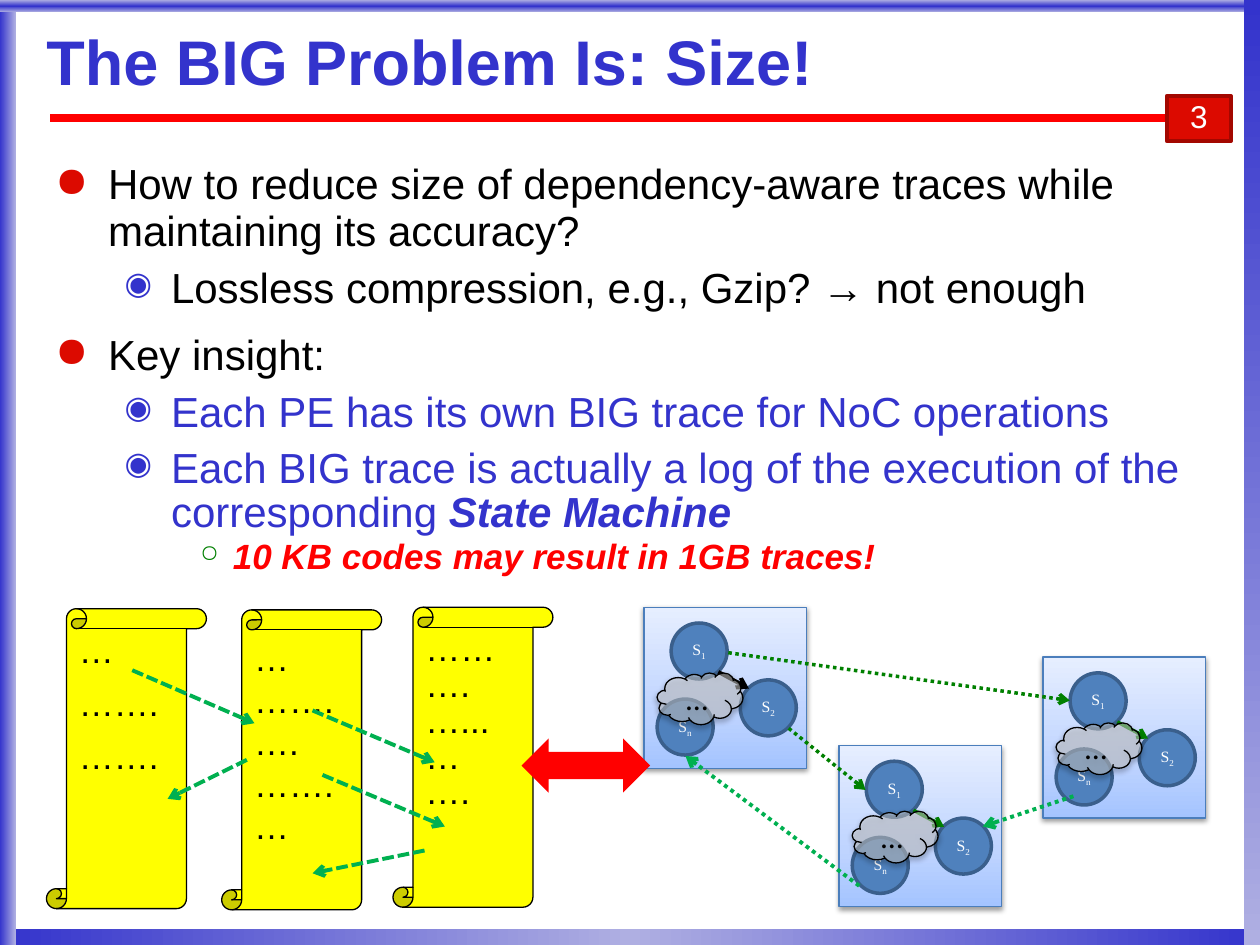
"""Build the slide about trace size and state machines."""
import pptx
import pptx.dml.color
import pptx.enum.dml
import pptx.enum.shapes
import pptx.enum.text
import pptx.oxml.ns
import pptx.util
from lxml import etree

Pt = pptx.util.Pt
qn = pptx.oxml.ns.qn
colour = pptx.dml.color.RGBColor.from_string
Kind = pptx.enum.shapes.MSO_SHAPE
Dash = pptx.enum.dml.MSO_LINE
Align = pptx.enum.text.PP_ALIGN
Anchor = pptx.enum.text.MSO_ANCHOR


def add_shape(kind, box, fill, line=None, width=0.75, angle=0, shadow=False):
    shape = slide.shapes.add_shape(kind, *[Pt(value) for value in box])
    shape.shadow.inherit = False
    if isinstance(fill, str):
        shape.fill.solid()
        shape.fill.fore_color.rgb = colour(fill)
    else:
        shape.fill.gradient()
        shape.fill.gradient_angle = angle
        stops = shape.element.spPr.find(".//" + qn("a:gsLst"))
        stops.clear()
        for position, shade in fill:
            stop = etree.SubElement(stops, qn("a:gs"), pos=str(position * 1000))
            etree.SubElement(stop, qn("a:srgbClr"), val=shade)
    if line:
        shape.line.color.rgb = colour(line)
        shape.line.width = Pt(width)
    else:
        shape.line.fill.background()
    if shadow:
        effects = shape.element.spPr.find(qn("a:effectLst"))
        outer = etree.SubElement(effects, qn("a:outerShdw"), blurRad=str(Pt(3.1)),
                                 dist=str(Pt(1.6)), dir="5400000", rotWithShape="0")
        black = etree.SubElement(outer, qn("a:srgbClr"), val="000000")
        etree.SubElement(black, qn("a:alpha"), val="38000")
    return shape


def add_run(paragraph, text, size, shade, font="Arial", bold=False, italic=False):
    run = paragraph.add_run()
    run.text = text
    run.font.size = Pt(size)
    run.font.name = font
    run.font.color.rgb = colour(shade)
    run.font.bold = bold
    run.font.italic = italic
    return run


presentation = pptx.Presentation()
presentation.slide_width = Pt(720)
presentation.slide_height = Pt(540)
slide = presentation.slides.add_slide(presentation.slide_layouts[6])

blue, pale = "3333CC", "AFAFE2"
for box, stops, angle in [
    ((0, 531, 720, 9), [(0, blue), (50, pale), (100, blue)], 0),
    ((0, 0, 9, 540), [(0, blue), (100, pale)], 0),
    ((0, 0, 720, 7), [(0, pale), (50, blue), (100, pale)], 270),
    ((711, 0, 9, 540), [(0, blue), (100, pale)], 270),
]:
    add_shape(Kind.RECTANGLE, box, stops, angle=angle)

title = slide.shapes.add_textbox(Pt(26.6), Pt(10.8), Pt(669.6), Pt(53.3)).text_frame
title.word_wrap = True
title.vertical_anchor = Anchor.MIDDLE
title.margin_left = title.margin_right = title.margin_top = title.margin_bottom = 0
title.paragraphs[0].line_spacing = 0.87
title_run = add_run(title.paragraphs[0], "The BIG Problem Is: Size!", 36, blue, bold=True)
title_effects = etree.Element(qn("a:effectLst"))
title_shadow = etree.SubElement(title_effects, qn("a:outerShdw"), dist=str(Pt(2.8)), dir="2700000")
etree.SubElement(title_shadow, qn("a:srgbClr"), val="B2B2B2")
title_run.font.fill
title_run.font.color
title_run._r.rPr.find(qn("a:solidFill")).addnext(title_effects)

levels = [
    dict(left=30.2, hang=30.2, spacing=0.93, before=12, bullet="●", shade="DC0A00", percent=100),
    dict(left=66.2, hang=26.6, spacing=0.87, before=7, bullet="◉", shade=blue, percent=75),
    dict(left=101.5, hang=18.7, spacing=0.87, before=2, bullet="○", shade="008000", percent=68),
]
body = slide.shapes.add_textbox(Pt(24.5), Pt(89.3), Pt(679.7), Pt(418.3)).text_frame
body.word_wrap = True
for index, (level, size, shade, text, emphasis) in enumerate([
    (0, 24, "000000",
     "How to reduce size of dependency-aware traces while maintaining its accuracy?", ""),
    (1, 24, "000000", "Lossless compression, e.g., Gzip? → not enough", ""),
    (0, 24, "000000", "Key insight:", ""),
    (1, 24, blue, "Each PE has its own BIG trace for NoC operations", ""),
    (1, 24, blue, "Each BIG trace is actually a log of the execution of the corresponding ",
     "State Machine"),
    (2, 20, "FF0000", "", "10 KB codes may result in 1GB traces!"),
]):
    paragraph = body.add_paragraph() if index else body.paragraphs[0]
    style = levels[level]
    paragraph.level = level
    paragraph.line_spacing = style["spacing"]
    paragraph.space_before = Pt(style["before"])
    properties = paragraph._p.get_or_add_pPr()
    properties.set("marL", str(Pt(style["left"])))
    properties.set("indent", str(-Pt(style["hang"])))
    bullet_colour = etree.SubElement(properties, qn("a:buClr"))
    etree.SubElement(bullet_colour, qn("a:srgbClr"), val=style["shade"])
    etree.SubElement(properties, qn("a:buSzPct"), val=str(style["percent"] * 1000))
    etree.SubElement(properties, qn("a:buChar"), char=style["bullet"])
    if text:
        add_run(paragraph, text, size, shade)
    if emphasis:
        add_run(paragraph, emphasis, size, shade, bold=True, italic=True)

machines = [(368, 347), (479.5, 426), (596, 375.5)]
panel_stops = [(0, "A4C4FF"), (35, "BFD4FF"), (100, "E6EEFF")]
for left, top in machines:
    add_shape(Kind.RECTANGLE, (left, top, 93, 92), panel_stops, "4B7EBC", angle=90, shadow=True)
    for name, across, down in [("1", 15.5, 9), ("n", 7.5, 52.5), ("2", 55, 41.5)]:
        state = add_shape(Kind.FLOWCHART_CONNECTOR, (left + across, top + down, 32, 32),
                          "4F81BD", "3A5F8C", 2)
        frame = state.text_frame
        frame.margin_left = frame.margin_right = frame.margin_top = frame.margin_bottom = 0
        frame.paragraphs[0].alignment = Align.CENTER
        add_run(frame.paragraphs[0], "S", 9, "FFFFFF", "Times New Roman")
        subscript = add_run(frame.paragraphs[0], name, 9, "FFFFFF", "Times New Roman")
        subscript._r.rPr.set("baseline", "-25000")

for left, top, spacing, before, traces in [
    (26.6, 347.8, 0.85, 10, ["…", "…….", "……."]),
    (224.6, 347, 0.85, 0, ["……", "….", "…...", "…", "…."]),
    (126.7, 348.5, 1, 0, ["…", "…….", "….", "…….", "…"]),
]:
    scroll = add_shape(Kind.VERTICAL_SCROLL, (left, top, 91.4, 171.4), "FFFF00", "000000")
    frame = scroll.text_frame
    frame.vertical_anchor = Anchor.TOP
    for index, trace in enumerate(traces):
        paragraph = frame.add_paragraph() if index else frame.paragraphs[0]
        paragraph.alignment = Align.LEFT
        paragraph.line_spacing = spacing
        paragraph.space_before = Pt(before)
        add_run(paragraph, trace, 20, "000000")

inner_arrows = [((left + 42.5, top + 37, left + 60, top + 46.5),
                 "008000" if index else "000000", 2 if index else 2.25, None)
                for index, (left, top) in enumerate(machines)]
state_arrows = [
    ((450.7, 416.2, 494.6, 451.4), "008000", 2, Dash.ROUND_DOT),
    ((491, 506.2, 391.7, 432), "00B050", 2.25, Dash.ROUND_DOT),
    ((416.2, 373, 611.3, 400.3), "008000", 2, Dash.ROUND_DOT),
    ((613.4, 455, 561.6, 472.3), "00B050", 2.25, Dash.ROUND_DOT),
]
trace_arrows = [(ends, "00B050", 2.25, Dash.SQUARE_DOT) for ends in [
    (75.6, 383, 145.4, 413.3), (178.6, 406, 248.4, 435.6), (141.1, 434.2, 95.8, 456.5),
    (184.3, 442.8, 254.2, 472.3), (242.6, 486, 178.6, 499),
]]
title_rule = ((28.8, 67.5, 697, 67.5), "FF0000", 4.5, None)
for ends, shade, width, dash in [title_rule] + inner_arrows + state_arrows + trace_arrows:
    connector = slide.shapes.add_connector(pptx.enum.shapes.MSO_CONNECTOR.STRAIGHT,
                                           *[Pt(value) for value in ends])
    connector.line.color.rgb = colour(shade)
    connector.line.width = Pt(width)
    if dash:
        connector.line.dash_style = dash
    if shade != "FF0000":
        etree.SubElement(connector.element.spPr.find(qn("a:ln")), qn("a:tailEnd"), type="arrow")
    etree.SubElement(connector.element.spPr, qn("a:effectLst"))

for left, top in machines:
    cloud = add_shape(Kind.CLOUD, (left + 7.5, top + 37.5, 49, 29.5), "D9D9D9", "000000", shadow=True)
    cloud_colour = cloud.element.spPr.find(qn("a:solidFill")).find(qn("a:srgbClr"))
    etree.SubElement(cloud_colour, qn("a:alpha"), val="50000")
    frame = cloud.text_frame
    frame.margin_left = frame.margin_right = frame.margin_top = frame.margin_bottom = 0
    frame.paragraphs[0].alignment = Align.CENTER
    add_run(frame.paragraphs[0], "…", 18, "000000", "Calibri")

add_shape(Kind.LEFT_RIGHT_ARROW, (298, 422, 73.5, 31), "FF0000")
number = add_shape(Kind.RECTANGLE, (666.7, 54.7, 36.7, 26), "DC0A00", "A30700", 2)
number.text_frame.paragraphs[0].alignment = Align.CENTER
number.text_frame.paragraphs[0].line_spacing = 0.85
add_run(number.text_frame.paragraphs[0], "3", 18, "FFFFFF")

presentation.save("out.pptx")
